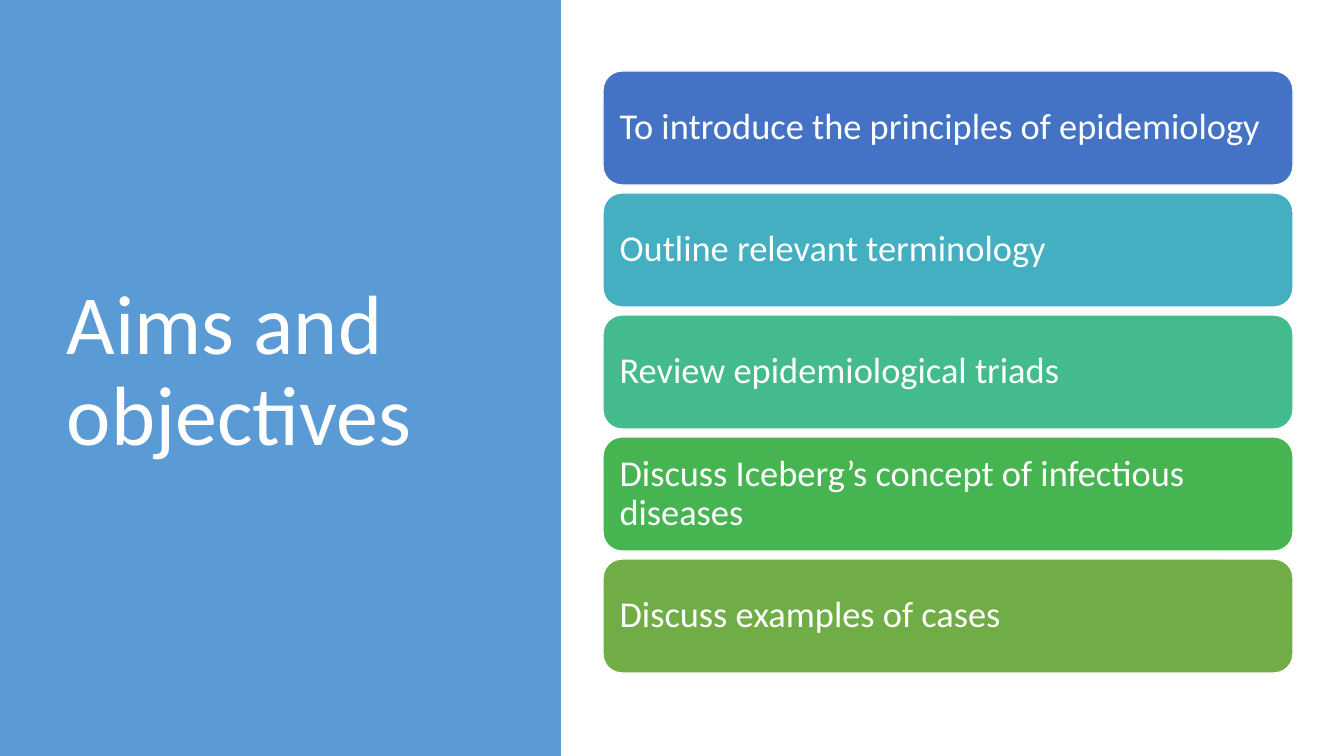
from dataclasses import dataclass

from pptx import Presentation
from pptx.dml.color import RGBColor
from pptx.enum.shapes import MSO_SHAPE
from pptx.enum.text import MSO_ANCHOR, MSO_AUTO_SIZE, PP_ALIGN
from pptx.util import Emu, Pt

RECT = MSO_SHAPE.RECTANGLE
ROUND = MSO_SHAPE.ROUNDED_RECTANGLE
MIDDLE = MSO_ANCHOR.MIDDLE
LEFT = PP_ALIGN.LEFT
FIXED = MSO_AUTO_SIZE.NONE
TITLE_ONLY = 5
SCALE = 914400 / 100.8


@dataclass(frozen=True)
class Theme:
    font: str = "Calibri"
    white: str = "FFFFFF"
    panel: str = "5B9BD5"
    title: int = 60
    aim: int = 26


THEME = Theme()
AIMS = [
    ("To introduce the principles of epidemiology", "4472C4"),
    ("Outline relevant terminology", "43AFC0"),
    ("Review epidemiological triads", "43BB8D"),
    ("Discuss Iceberg’s concept of infectious diseases", "45B451"),
    ("Discuss examples of cases", "70AD47"),
]


def px(count):
    return Emu(round(count * SCALE))


def rgb(code):
    return RGBColor.from_string(code)


def apply(target, values):
    for name, value in values.items():
        setattr(target, name, value)


def write(shape, text, size, inset):
    frame = shape.text_frame
    frame.text = text
    apply(frame, {
        "word_wrap": True, "auto_size": FIXED, "vertical_anchor": MIDDLE,
        "margin_left": px(inset), "margin_right": px(inset),
    })
    para = frame.paragraphs[0]
    apply(para, {"alignment": LEFT, "line_spacing": 0.9})
    apply(para.font, {"name": THEME.font, "size": Pt(size), "bold": False})
    para.font.color.rgb = rgb(THEME.white)


def add_block(slide, kind, box, color):
    shape = slide.shapes.add_shape(kind, *map(px, box))
    shape.shadow.inherit = False
    shape.fill.solid()
    shape.fill.fore_color.rgb = rgb(color)
    shape.line.fill.background()
    return shape


def add_panel(slide):
    """Place the side panel behind the title."""
    panel = add_block(slide, RECT, (0, 0, 561, 756), THEME.panel)
    slide.shapes.title.element.addprevious(panel.element)


def set_title(slide, text):
    title = slide.shapes.title
    apply(title, {
        "left": px(57), "top": px(69), "width": px(419), "height": px(607),
    })
    write(title, text, THEME.title, 10)


def add_aims(slide, top=71, step=122):
    for row, (text, color) in enumerate(AIMS):
        bar = add_block(slide, ROUND, (603, top + row * step, 690, 114), color)
        bar.line.color.rgb = rgb(THEME.white)
        bar.line.width = Pt(1)
        write(bar, text, THEME.aim, 11)


def main():
    deck = Presentation()
    apply(deck, {"slide_width": px(1344), "slide_height": px(756)})
    slide = deck.slides.add_slide(deck.slide_layouts[TITLE_ONLY])
    add_panel(slide)
    set_title(slide, "Aims and objectives")
    add_aims(slide)
    deck.save("out.pptx")


if __name__ == "__main__":
    main()
